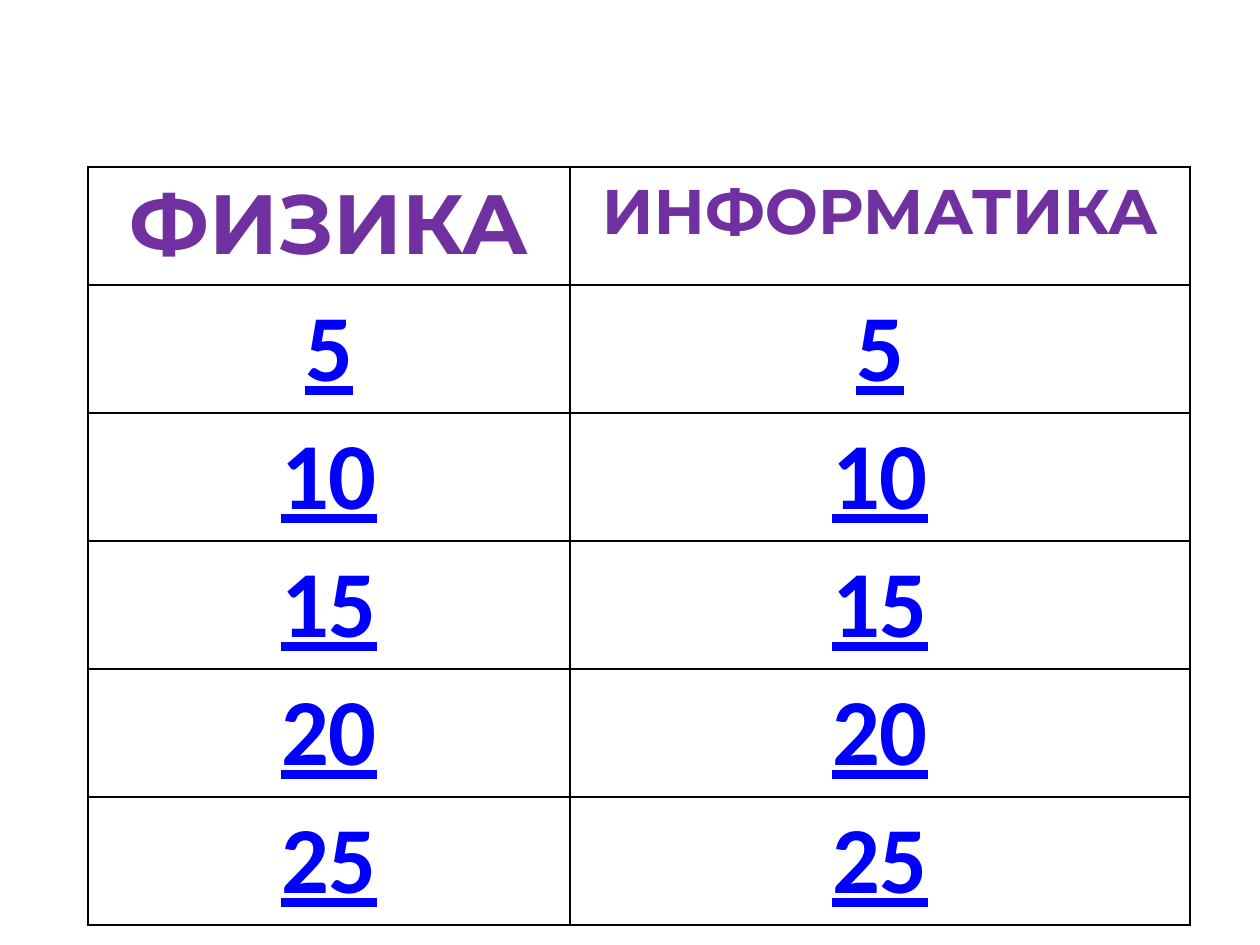
from lxml import etree
from pptx import Presentation
from pptx import util as u
from pptx.dml.color import RGBColor
from pptx.enum import text
from pptx.oxml import ns

PURPLE = RGBColor(0x70, 0x30, 0xA0)
BLUE = RGBColor(0x00, 0x00, 0xFF)
BLACK = RGBColor(0x00, 0x00, 0x00)
PX = 914400 / 126


def px(length):
    return u.Emu(round(length * PX))


def add_borders(cell, color):
    properties = cell._tc.get_or_add_tcPr()
    for side in ("lnL", "lnR", "lnT", "lnB"):
        line = etree.SubElement(properties, ns.qn(f"a:{side}"), w=str(u.Pt(1)))
        fill = etree.SubElement(line, ns.qn("a:solidFill"))
        etree.SubElement(fill, ns.qn("a:srgbClr"), val=str(color))


presentation = Presentation()
presentation.slide_width = px(1260)
presentation.slide_height = px(945)
slide = presentation.slides.add_slide(presentation.slide_layouts[6])

subjects = [("ФИЗИКА", 48), ("ИНФОРМАТИКА", 36)]
points = [5, 10, 15, 20, 25]
column_widths = [482, 620]
row_heights = [118] + [128] * len(points)

table = slide.shapes.add_table(
    len(row_heights), len(subjects), px(88), px(167),
    px(sum(column_widths)), px(sum(row_heights)),
).table
table.first_row = False
table.horz_banding = False
for column, width in zip(table.columns, column_widths):
    column.width = px(width)
for row, height in zip(table.rows, row_heights):
    row.height = px(height)

for column_index, (subject, subject_size) in enumerate(subjects):
    for row_index, label in enumerate([subject] + points):
        is_header = row_index == 0
        cell = table.cell(row_index, column_index)
        add_borders(cell, BLACK)
        cell.fill.background()
        cell.text_frame.text = str(label)
        paragraph = cell.text_frame.paragraphs[0]
        paragraph.alignment = text.PP_ALIGN.CENTER
        font = paragraph.runs[0].font
        font.name = "Montserrat" if is_header else "Calibri"
        font.size = u.Pt(subject_size if is_header else 54)
        font.bold = True
        font.underline = not is_header
        font.color.rgb = PURPLE if is_header else BLUE

presentation.save("out.pptx")
